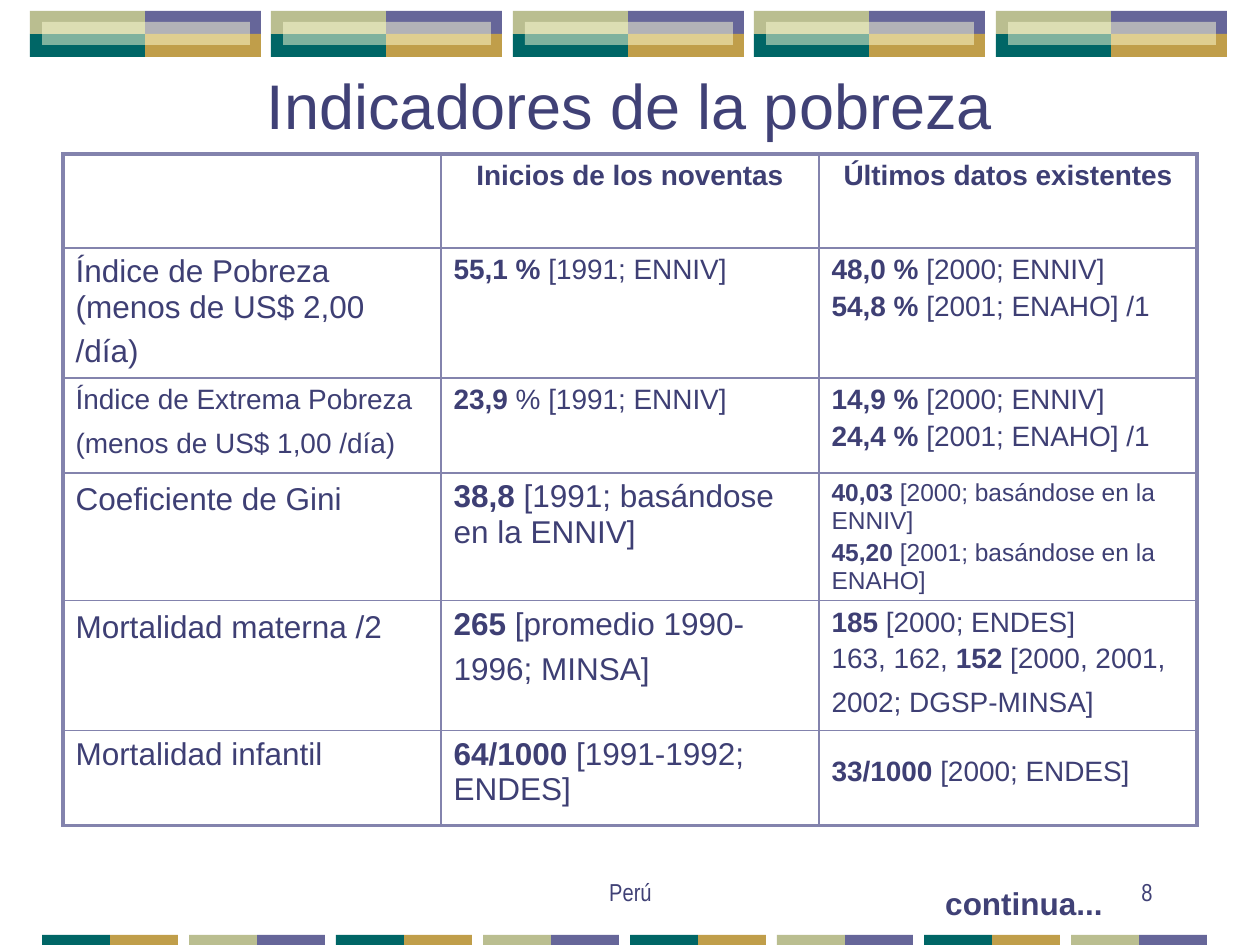
"""Build the slide with the table of poverty indicators for Peru."""
import pptx
import pptx.dml.color
import pptx.enum.text
import pptx.enum.shapes
import pptx.oxml
import pptx.oxml.ns
import pptx.util

RGBColor = pptx.dml.color.RGBColor
ALIGN = pptx.enum.text.PP_ALIGN
ANCHOR = pptx.enum.text.MSO_ANCHOR

PURPLE = RGBColor(0x66, 0x66, 0x99)
GOLD = RGBColor(0xC0, 0x9E, 0x4A)
TEAL = RGBColor(0x00, 0x66, 0x66)
OLIVE = RGBColor(0xBA, 0xBE, 0x90)
CREAM = RGBColor(0xFE, 0xFE, 0xD6)
TITLE_INK = RGBColor(0x40, 0x41, 0x76)
TABLE_INK = RGBColor(0x3E, 0x3F, 0x74)
BORDER = RGBColor(0x83, 0x83, 0xAD)

COLUMN_WIDTH = 378
ROW_HEIGHTS = [94, 130, 95, 127, 130, 95]

# Each cell: text size, paragraphs with bold between asterisks, size of the closing space.
ROWS = [
    [(16, [], 0),
     (16, ["*Inicios de los noventas*"], 0),
     (16, ["*Últimos datos existentes*"], 0)],
    [(18, ["Índice de Pobreza (menos de US$ 2,00 /día)"], 24),
     (16, ["*55,1 %* [1991; ENNIV]"], 0),
     (16, ["*48,0 %* [2000; ENNIV]", "*54,8 %* [2001; ENAHO] /1"], 0)],
    [(16, ["Índice de Extrema Pobreza (menos de US$ 1,00 /día)"], 24),
     (16, ["*23,9* % [1991; ENNIV]"], 0),
     (16, ["*14,9 %* [2000; ENNIV]", "*24,4 %* [2001; ENAHO] /1"], 0)],
    [(18, ["Coeficiente de Gini"], 20),
     (18, ["*38,8* [1991; basándose en la ENNIV]"], 0),
     (14, ["*40,03* [2000; basándose en la ENNIV]",
           "*45,20* [2001; basándose en la ENAHO]"], 0)],
    [(18, ["Mortalidad materna /2"], 20),
     (18, ["*265* [promedio 1990-1996; MINSA]"], 24),
     (16, ["*185* [2000; ENDES]",
           "163, 162, *152* [2000, 2001, 2002; DGSP-MINSA]"], 24)],
    [(18, ["Mortalidad infantil"], 0),
     (18, ["*64/1000* [1991-1992; ENDES]"], 0),
     (16, ["*33/1000* [2000; ENDES]"], 28)],
]


def px(length):
    return pptx.util.Emu(round(length * 914400 / 126))


def add_run(paragraph, text, *, size, color=TITLE_INK, font="Arial", bold=False):
    run = paragraph.add_run()
    run.text = text
    run.font.size = pptx.util.Pt(size)
    run.font.name = font
    run.font.bold = bold
    run.font.color.rgb = color


class SlideBuilder:
    def __init__(self, slide):
        self.slide = slide

    def rectangle(self, left, top, width, height, color, alpha=None):
        shape = self.slide.shapes.add_shape(
            pptx.enum.shapes.MSO_SHAPE.RECTANGLE, px(left), px(top), px(width), px(height))
        shape.shadow.inherit = False
        shape.line.fill.background()
        shape.fill.solid()
        shape.fill.fore_color.rgb = color
        if alpha is not None:
            color_element = shape.fill._xPr.find(".//" + pptx.oxml.ns.qn("a:srgbClr"))
            color_element.append(pptx.oxml.parse_xml(
                f'<a:alpha {pptx.oxml.ns.nsdecls("a")} val="{alpha * 1000}"/>'))

    def top_tile(self, left):
        self.rectangle(left + 115, 11, 116, 23, PURPLE)
        self.rectangle(left + 115, 34, 116, 23, GOLD)
        self.rectangle(left, 34, 115, 23, TEAL)
        self.rectangle(left, 11, 115, 23, OLIVE)
        self.rectangle(left + 12, 22, 208, 23, CREAM, alpha=50)

    def bottom_tile(self, left, first_color, second_color):
        self.rectangle(left + 68, 935, 68, 10, second_color)
        self.rectangle(left, 935, 68, 10, first_color)

    def title(self, left, top, width, height, text):
        shape = self.slide.shapes.title
        shape.left, shape.top, shape.width, shape.height = map(px, (left, top, width, height))
        self.fill_frame(shape.text_frame, text, ANCHOR.MIDDLE, ALIGN.CENTER, size=36)

    def text(self, left, top, width, height, text, anchor, align, **style):
        shape = self.slide.shapes.add_textbox(px(left), px(top), px(width), px(height))
        self.fill_frame(shape.text_frame, text, anchor, align, **style)

    def fill_frame(self, frame, text, anchor, align, **style):
        frame.word_wrap = True
        frame.auto_size = pptx.enum.text.MSO_AUTO_SIZE.NONE
        frame.vertical_anchor = anchor
        frame.paragraphs[0].alignment = align
        add_run(frame.paragraphs[0], text, **style)

    def table(self, left, top, rows):
        table = self.slide.shapes.add_table(
            len(rows), len(rows[0]), px(left), px(top),
            px(COLUMN_WIDTH * len(rows[0])), px(sum(ROW_HEIGHTS))).table
        table.first_row = table.horz_banding = False
        for column in table.columns:
            column.width = px(COLUMN_WIDTH)
        for row, height in zip(table.rows, ROW_HEIGHTS):
            row.height = px(height)
        last_row, last_column = len(rows) - 1, len(rows[0]) - 1
        for i, row in enumerate(rows):
            for j, content in enumerate(row):
                cell = table.cell(i, j)
                self.cell_borders(cell, L=j == 0, R=j == last_column,
                                  T=i == 0, B=i == last_row)
                cell.fill.background()
                self.cell_text(cell, *content, ALIGN.CENTER if i == 0 else ALIGN.LEFT)

    def cell_borders(self, cell, **outer_sides):
        properties = cell._tc.get_or_add_tcPr()
        for side, outer in outer_sides.items():
            width = pptx.util.Pt(2.25 if outer else 1)
            properties.append(pptx.oxml.parse_xml(
                f'<a:ln{side} {pptx.oxml.ns.nsdecls("a")} w="{width}"><a:solidFill>'
                f'<a:srgbClr val="{BORDER}"/></a:solidFill></a:ln{side}>'))

    def cell_text(self, cell, size, lines, closing_size, align):
        frame = cell.text_frame
        for i, line in enumerate(lines):
            paragraph = frame.add_paragraph() if i else frame.paragraphs[0]
            paragraph.alignment = align
            if i:
                paragraph.space_before = pptx.util.Pt(round(size * 0.2, 1))
            for k, part in enumerate(line.split("*")):
                if part:
                    add_run(paragraph, part, size=size, color=TABLE_INK, bold=k % 2 == 1)
        if closing_size:
            add_run(paragraph, " ", size=closing_size, color=TABLE_INK)


def main():
    presentation = pptx.Presentation()
    presentation.slide_width, presentation.slide_height = px(1260), px(945)
    builder = SlideBuilder(presentation.slides.add_slide(presentation.slide_layouts[5]))
    for i in range(5):
        builder.top_tile(30 + i * 483 // 2)
    for i in range(8):
        builder.bottom_tile(42 + i * 147, *((OLIVE, PURPLE) if i % 2 else (TEAL, GOLD)))
    builder.text(431, 850, 399, 63, "Perú", ANCHOR.BOTTOM, ALIGN.CENTER,
                 size=14, font="Arial Narrow")
    builder.text(903, 850, 262, 63, "8", ANCHOR.BOTTOM, ALIGN.RIGHT,
                 size=14, font="Arial Narrow")
    builder.title(94, 73, 1071, 63, "Indicadores de la pobreza")
    builder.table(63, 154, ROWS)
    builder.text(819, 882, 410, 42, "continua...", ANCHOR.MIDDLE, ALIGN.CENTER,
                 size=18, bold=True)
    presentation.save("out.pptx")


if __name__ == "__main__":
    main()
